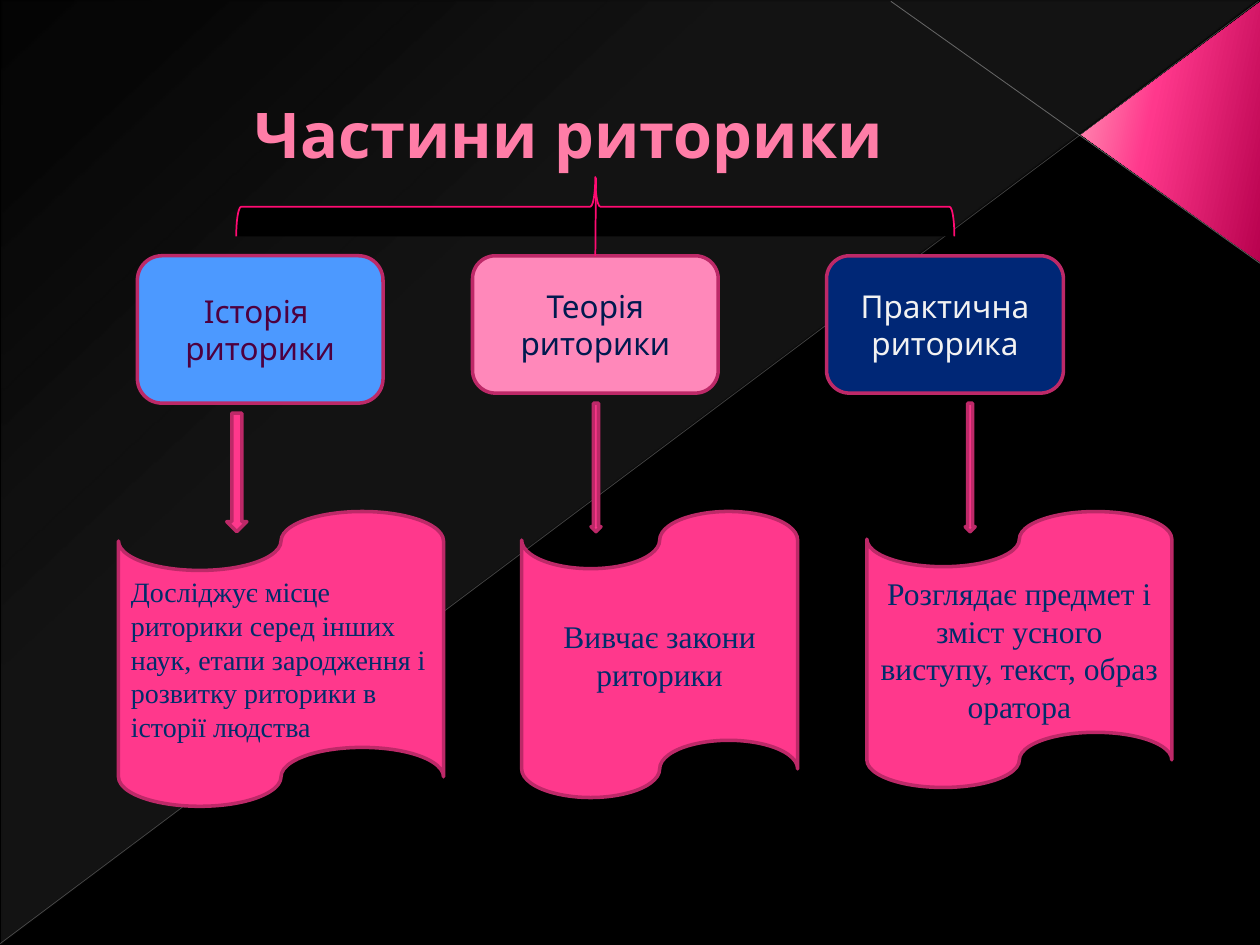
"""Build a slide that shows the three parts of rhetoric as a diagram."""
from lxml.etree import SubElement
from pptx import Presentation
from pptx.dml.color import RGBColor
from pptx.enum.shapes import MSO_CONNECTOR, MSO_SHAPE
from pptx.enum.text import MSO_ANCHOR, PP_ALIGN
from pptx.oxml.ns import qn
from pptx.util import Inches, Pt

COLOURS = {
    "black": "000000", "veil": "D2D2D2", "silver": "C6C6C6", "grey": "BFBFBF",
    "crimson": "B8014E", "pink": "FF388C", "blush": "FF9CB9", "title": "FF7DA7",
    "title_edge": "B12761", "edge": "BD2968", "brace": "FF0B72",
    "blue": "4C99FF", "rose": "FF88BA", "navy": "002776",
    "plum": "4E003F", "midnight": "001A4F", "white": "F2F2F2", "ink": "002D6A",
}
HEADING_FONT = "League Spartan"
BODY_FONT = "Times New Roman"


def add_block(kind, box, fill, line="edge", width=2):
    shape = slide.shapes.add_shape(kind, *map(Inches, box))
    shape.shadow.inherit = False
    shape.fill.solid()
    shape.fill.fore_color.rgb = RGBColor.from_string(COLOURS[fill])
    shape.line.color.rgb = RGBColor.from_string(COLOURS[line])
    shape.line.width = Pt(width)
    return shape


def write_text(shape, text, colour, alignment=PP_ALIGN.CENTER, **font_values):
    frame = shape.text_frame
    frame.word_wrap = True
    frame.vertical_anchor = MSO_ANCHOR.MIDDLE
    frame.text = text
    for paragraph in frame.paragraphs:
        paragraph.alignment = alignment
        font = paragraph.runs[0].font
        font.color.rgb = RGBColor.from_string(COLOURS[colour])
        for name, value in font_values.items():
            setattr(font, name, value)


presentation = Presentation()
presentation.slide_width = Inches(10)
presentation.slide_height = Inches(7.5)
slide = presentation.slides.add_slide(presentation.slide_layouts[6])
slide.background.fill.solid()
slide.background.fill.fore_color.rgb = RGBColor.from_string(COLOURS["black"])

triangles = [
    (MSO_SHAPE.RIGHT_TRIANGLE, (0.01, 0.01, 9.98, 7.48), 0, 133,
     [(0, "veil", 10), (70, "veil", 8), (100, "veil", 1)]),
    (MSO_SHAPE.ISOSCELES_TRIANGLE, (8.26, 0.34, 2.07, 1.42), 90, 258,
     [(0, "crimson", 100), (60, "pink", 100), (100, "blush", 100)]),
]
for kind, box, rotation, angle, stops in triangles:
    triangle = add_block(kind, box, "black")
    triangle.line.fill.background()
    triangle.rotation = rotation
    properties = triangle._element.spPr
    properties.find(qn("a:xfrm")).set("flipV", "1")
    solid = properties.find(qn("a:solidFill"))
    gradient = SubElement(properties, qn("a:gradFill"), rotWithShape="1")
    properties.replace(solid, gradient)
    stop_list = SubElement(gradient, qn("a:gsLst"))
    for position, colour, opacity in stops:
        stop = SubElement(stop_list, qn("a:gs"), pos=str(position * 1000))
        value = SubElement(stop, qn("a:srgbClr"), val=COLOURS[colour])
        SubElement(value, qn("a:alpha"), val=str(opacity * 1000))
    SubElement(gradient, qn("a:lin"), ang=str(angle * 60000), scaled="0")
triangle.adjustments[0] = 0.51

title = slide.shapes.add_textbox(*map(Inches, (0.62, 0.31, 7.92, 1.49)))
write_text(title, "Частини риторики ", "title",
           name=HEADING_FONT, size=Pt(36), bold=True)
run_properties = title.text_frame.paragraphs[0].runs[0].font._element
outline = SubElement(run_properties, qn("a:ln"), w=str(Pt(0.5)))
run_properties.insert(0, outline)
outline_fill = SubElement(outline, qn("a:solidFill"))
SubElement(outline_fill, qn("a:srgbClr"), val=COLOURS["title_edge"])

parts = [
    ("Історія \nриторики", (1.09, 2.03, 1.95, 1.17), "blue", "plum"),
    ("Теорія риторики", (3.75, 2.03, 1.95, 1.09), "rose", "midnight"),
    ("Практична риторика", (6.56, 2.03, 1.88, 1.09), "navy", "white"),
]
part_boxes = []
for text, box, fill, colour in parts:
    part = add_block(MSO_SHAPE.FLOWCHART_ALTERNATE_PROCESS, box, fill)
    write_text(part, text, colour, name=HEADING_FONT, size=Pt(18))
    part_boxes.append(part)

brace = add_block(MSO_SHAPE.RIGHT_BRACE, (4.49, -1.21, 0.47, 5.7), "black", "brace", 1)
brace.rotation = 270

lines = [
    ((10, 2.09, 7.07, 0.01), "silver", 0.47, 45),
    ((0, 7.49, 9.99, 0.01), "grey", 0.39, 35),
    ((4.73, 1.41, 4.73, 2.03), "brace", 1, 100),
]
for ends, colour, width, opacity in lines:
    connector = slide.shapes.add_connector(MSO_CONNECTOR.STRAIGHT, *map(Inches, ends))
    connector.line.color.rgb = RGBColor.from_string(COLOURS[colour])
    connector.line.width = Pt(width)
    properties = connector._element.spPr
    SubElement(properties.find(".//" + qn("a:srgbClr")), qn("a:alpha"),
               val=str(opacity * 1000))
    SubElement(properties, qn("a:effectLst"))
    if colour != "brace":
        title._element.addprevious(connector._element)
connector.end_connect(part_boxes[1], 0)

for box in [(1.8, 3.28, 0.16, 0.94), (4.69, 3.2, 0.08, 1.02), (7.66, 3.2, 0.08, 1.02)]:
    add_block(MSO_SHAPE.DOWN_ARROW, box, "pink")

descriptions = [
    ("Досліджує місце риторики серед інших наук, етапи зародження і "
     "розвитку риторики в історії людства",
     (0.94, 4.06, 2.58, 2.34), PP_ALIGN.LEFT, 16),
    ("Вивчає закони риторики", (4.14, 4.06, 2.19, 2.27), PP_ALIGN.CENTER, 18),
    ("Розглядає предмет і зміст усного виступу, текст, образ оратора",
     (6.88, 4.06, 2.42, 2.19), PP_ALIGN.CENTER, 18),
]
for text, box, alignment, size in descriptions:
    tape = add_block(MSO_SHAPE.FLOWCHART_PUNCHED_TAPE, box, "pink")
    write_text(tape, text, "ink", alignment, name=BODY_FONT, size=Pt(size))

presentation.save("out.pptx")
